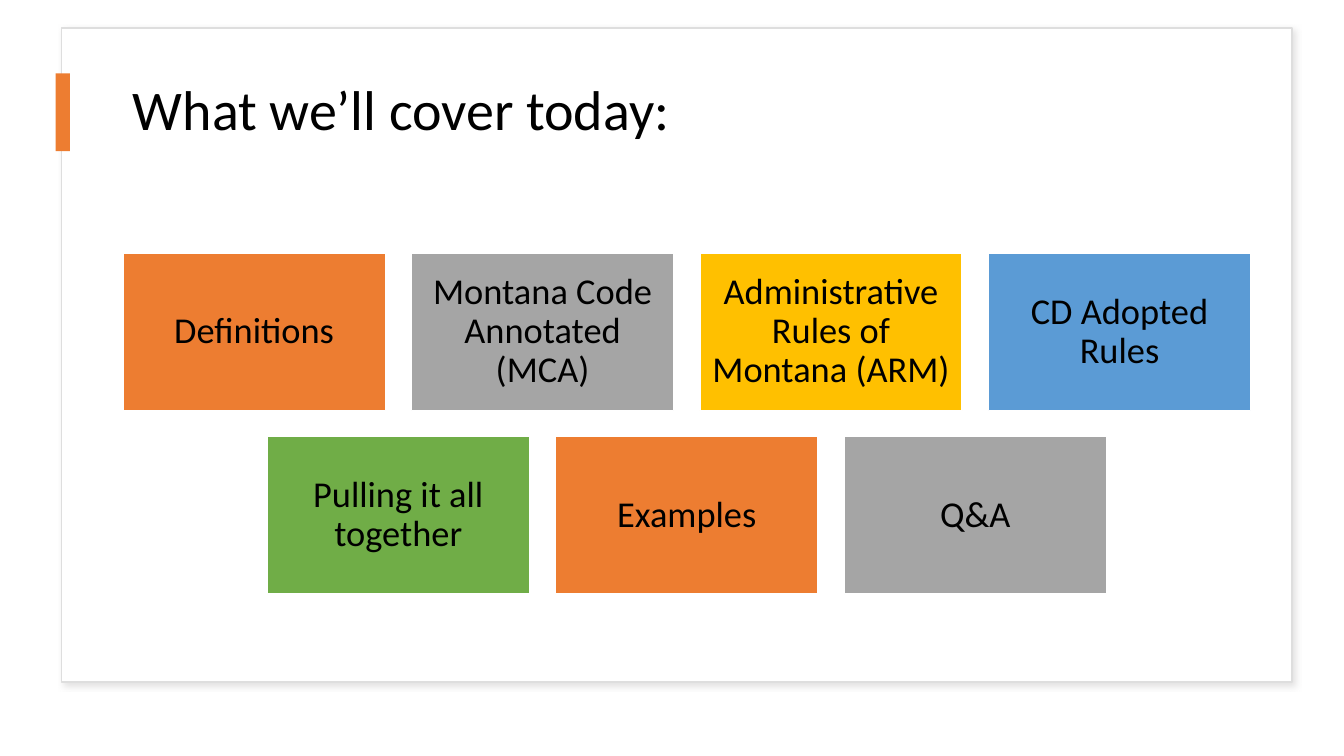
from dataclasses import dataclass

from lxml.etree import SubElement
from pptx import Presentation
from pptx.dml.color import RGBColor
from pptx.enum.shapes import MSO_SHAPE as Preset
from pptx.enum.text import MSO_ANCHOR as Anchor, MSO_AUTO_SIZE as AutoSize, PP_ALIGN as Align
from pptx.oxml.ns import qn
from pptx.util import Cm, Pt


@dataclass(frozen=True)
class Theme:
    font: str = "Calibri"
    title_size: int = 40
    tile_size: int = 26
    text: str = "000000"
    white: str = "FFFFFF"
    border: str = "DEDEDE"
    shadow: str = "C5C3C3"
    orange: str = "ED7D31"
    gray: str = "A5A5A5"
    gold: str = "FFC000"
    blue: str = "5B9BD5"
    green: str = "70AD47"


@dataclass(frozen=True)
class Box:
    left: float
    top: float
    width: float
    height: float

    def lengths(self):
        return [Cm(value) for value in (self.left, self.top, self.width, self.height)]


THEME = Theme()
TOPIC_ROWS = [
    [
        ("Definitions", THEME.orange),
        ("Montana Code Annotated (MCA)", THEME.gray),
        ("Administrative Rules of Montana (ARM)", THEME.gold),
        ("CD Adopted Rules", THEME.blue),
    ],
    [
        ("Pulling it all together", THEME.green),
        ("Examples", THEME.orange),
        ("Q&A", THEME.gray),
    ],
]


def set_all(target, values):
    for name, value in values.items():
        setattr(target, name, value)


def add_rectangle(page, box, fill, line=None):
    shape = page.shapes.add_shape(Preset.RECTANGLE, *box.lengths())
    shape.shadow.inherit = False
    shape.fill.solid()
    shape.fill.fore_color.rgb = RGBColor.from_string(fill)
    if line:
        shape.line.color.rgb = RGBColor.from_string(line)
        shape.line.width = Pt(1)
    else:
        shape.line.fill.background()
    return shape


def write_text(shape, text, size, align, inset):
    frame = shape.text_frame
    frame.text = text
    set_all(frame, {
        "word_wrap": True,
        "auto_size": AutoSize.NONE,
        "vertical_anchor": Anchor.MIDDLE,
        "margin_left": inset,
        "margin_right": inset,
        "margin_top": inset,
        "margin_bottom": inset,
    })
    para = frame.paragraphs[0]
    set_all(para, {"alignment": align, "line_spacing": 0.9})
    span = para.runs[0]
    set_all(span.font, {"name": THEME.font, "size": Pt(size)})
    span.font.color.rgb = RGBColor.from_string(THEME.text)


def add_card(page, box):
    card = add_rectangle(page, box, THEME.white, THEME.border)
    effects = card._element.spPr.find(qn("a:effectLst"))
    shadow = SubElement(effects, qn("a:outerShdw"), blurRad=str(Pt(4)), dist=str(Pt(3)),
                        dir="2700000", algn="tl", rotWithShape="0")
    color = SubElement(shadow, qn("a:srgbClr"), val=THEME.shadow)
    SubElement(color, qn("a:alpha"), val="50000")


def add_heading(page, box, text):
    title = page.shapes.title
    set_all(title, dict(zip(("left", "top", "width", "height"), box.lengths())))
    write_text(title, text, THEME.title_size, Align.LEFT, Cm(0.25))
    page.shapes._spTree.append(title._element)
    marker_height = 1.96
    marker_top = box.top + (box.height - marker_height) / 2
    add_rectangle(page, Box(box.left - 1.7, marker_top, 0.36, marker_height), THEME.orange)


def add_topics(page, box, rows):
    columns = max(len(row) for row in rows)
    tile_width = box.width / (columns + 0.1 * (columns - 1))
    gap = 0.1 * tile_width
    tile_height = (box.height - gap * (len(rows) - 1)) / len(rows)
    for row_index, row in enumerate(rows):
        row_width = len(row) * (tile_width + gap) - gap
        left = box.left + (box.width - row_width) / 2
        top = box.top + row_index * (tile_height + gap)
        for column, (text, fill) in enumerate(row):
            place = Box(left + column * (tile_width + gap), top, tile_width, tile_height)
            tile = add_rectangle(page, place, fill, THEME.white)
            write_text(tile, text, THEME.tile_size, Align.CENTER, Cm(0.28))


def build_agenda(deck):
    page = deck.slides.add_slide(deck.slide_layouts.get_by_name("Title Only"))
    add_card(page, Box(1.55, 0.71, 31.01, 16.48))
    add_heading(page, Box(3.1, 1.42, 28.42, 2.82), "What we’ll cover today:")
    add_topics(page, Box(3.1, 6.38, 28.42, 8.59), TOPIC_ROWS)


def main():
    deck = Presentation()
    set_all(deck, {"slide_width": Cm(33.87), "slide_height": Cm(19.05)})
    build_agenda(deck)
    deck.save("out.pptx")


if __name__ == "__main__":
    main()
